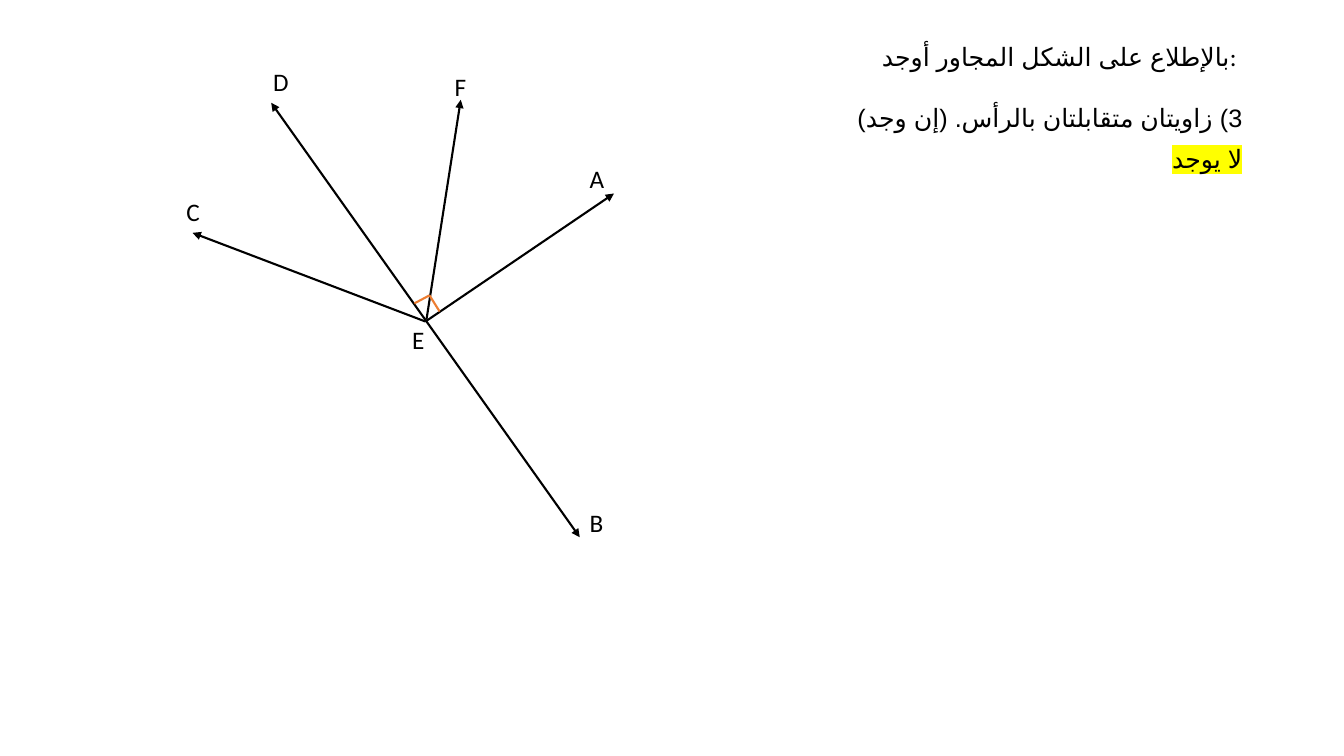
from lxml import etree
from pptx import Presentation
from pptx import util as u
from pptx.dml.color import RGBColor
from pptx.enum import shapes, text
from pptx.oxml import ns

BLACK, ORANGE, YELLOW = "000000", "ED7D31", "FFFF00"
VERTEX = (4.22, 3.19)

RAYS = [
    ((2.69, 1.02), (5.75, 5.33), ("headEnd", "tailEnd")),
    (VERTEX, (6.09, 1.92), ("tailEnd",)),
    (VERTEX, (1.91, 2.31), ("tailEnd",)),
    ((4.23, 3.17), (4.57, 0.99), ("tailEnd",)),
]
RIGHT_ANGLE = [(4.36, 3.09), (4.26, 2.93), (4.11, 3.01)]
POINTS = {
    "A": (5.75, 1.57),
    "B": (5.75, 4.98),
    "C": (1.75, 1.9),
    "D": (2.61, 0.61),
    "E": (3.99, 3.17),
    "F": (4.41, 0.66),
}
QUESTION = [
    ("بالإطلاع على الشكل المجاور أوجد: ", False),
    ("3) زاويتان متقابلتان بالرأس. (إن وجد)", True),
]
ANSWER = [("لا يوجد", False)]
FONT = {"name": "Calibri", "size": u.Pt(18)}
ARABIC_FONT, ARABIC = "Arial", "ar-SA"
FRAME = {"word_wrap": True, "auto_size": text.MSO_AUTO_SIZE.SHAPE_TO_FIT_TEXT}


def color(value):
    return RGBColor.from_string(value)


def add_line(page, start, end, line_color, arrows=()):
    line = page.shapes.add_connector(
        shapes.MSO_CONNECTOR.STRAIGHT, *map(u.Inches, start + end))
    line.line.color.rgb = color(line_color)
    line.line.width = u.Pt(1.5)
    outline = line.line._get_or_add_ln()
    for arrow in arrows:
        etree.SubElement(outline, ns.qn("a:" + arrow), type="triangle")
    etree.SubElement(line._element.spPr, ns.qn("a:effectLst"))


def add_text(page, bounds, lines, align, arabic=False, highlight=None):
    box = page.shapes.add_textbox(*map(u.Inches, bounds))
    frame = box.text_frame
    for key, value in FRAME.items():
        setattr(frame, key, value)
    for index, (words, right_to_left) in enumerate(lines):
        para = frame.add_paragraph() if index else frame.paragraphs[0]
        para.alignment = align
        if index:
            para.space_before = u.Pt(22)
        if right_to_left:
            para._p.get_or_add_pPr().set("rtl", "1")
        span = para.add_run()
        span.text = words
        for key, value in FONT.items():
            setattr(span.font, key, value)
        span.font.color.rgb = color(BLACK)
        style = span._r.rPr
        if arabic:
            style.set("lang", ARABIC)
            etree.SubElement(style, ns.qn("a:cs"), typeface=ARABIC_FONT)
        if highlight:
            marker = etree.Element(ns.qn("a:highlight"))
            etree.SubElement(marker, ns.qn("a:srgbClr"), val=highlight)
            style.find(ns.qn("a:solidFill")).addnext(marker)


def main():
    deck = Presentation()
    deck.slide_width, deck.slide_height = u.Inches(13.33), u.Inches(7.5)
    page = deck.slides.add_slide(deck.slide_layouts[6])
    for start, end, arrows in RAYS:
        add_line(page, start, end, BLACK, arrows)
    for start, end in zip(RIGHT_ANGLE, RIGHT_ANGLE[1:]):
        add_line(page, start, end, ORANGE)
    for name, corner in POINTS.items():
        add_text(page, corner + (0.34, 0.4), [(name, False)], text.PP_ALIGN.LEFT)
    right = text.PP_ALIGN.RIGHT
    add_text(page, (6.81, 0.36, 5.61, 1.01), QUESTION, right, True)
    add_text(page, (10.15, 1.37, 2.27, 0.4), ANSWER, right, True, YELLOW)
    deck.save("out.pptx")


if __name__ == "__main__":
    main()
